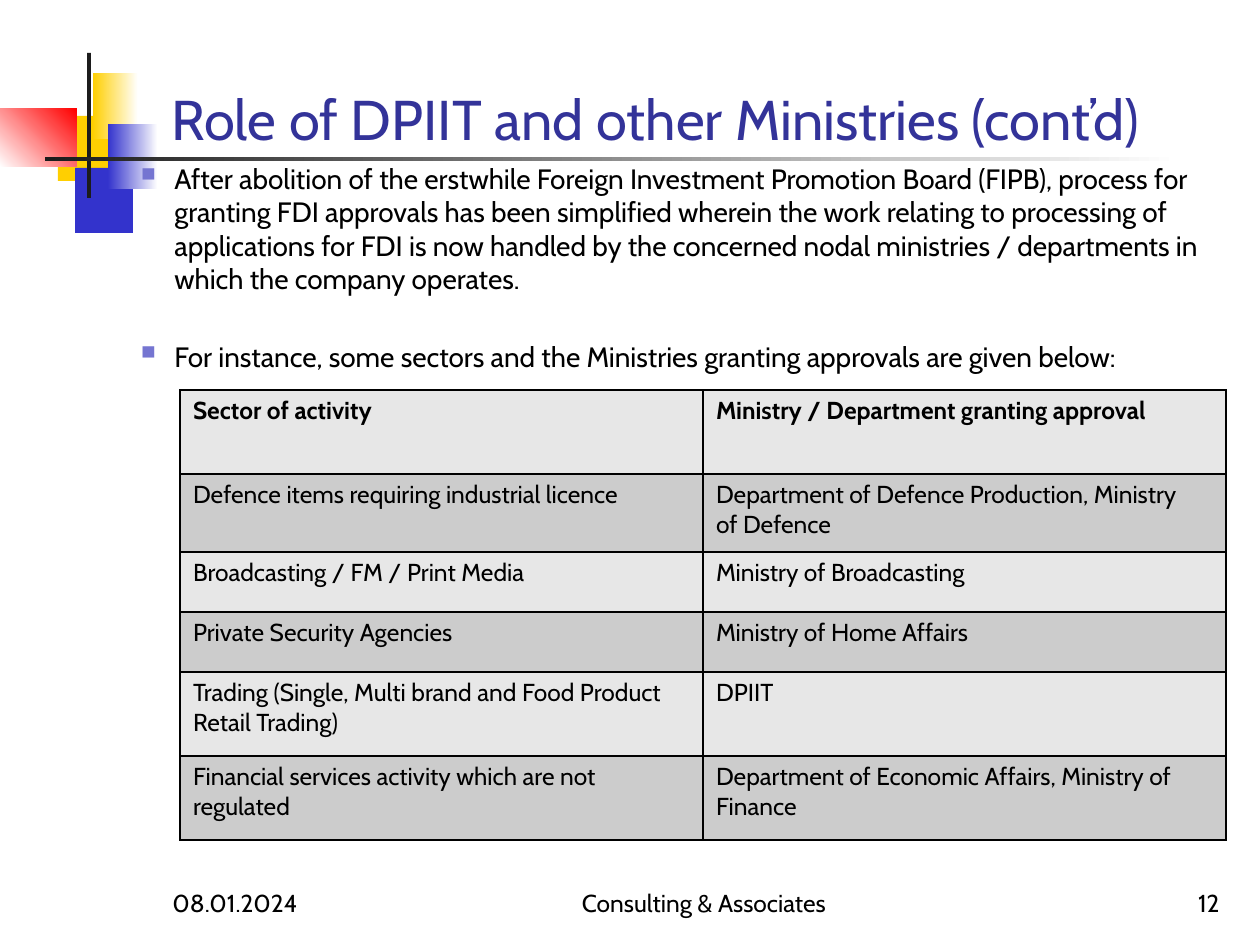
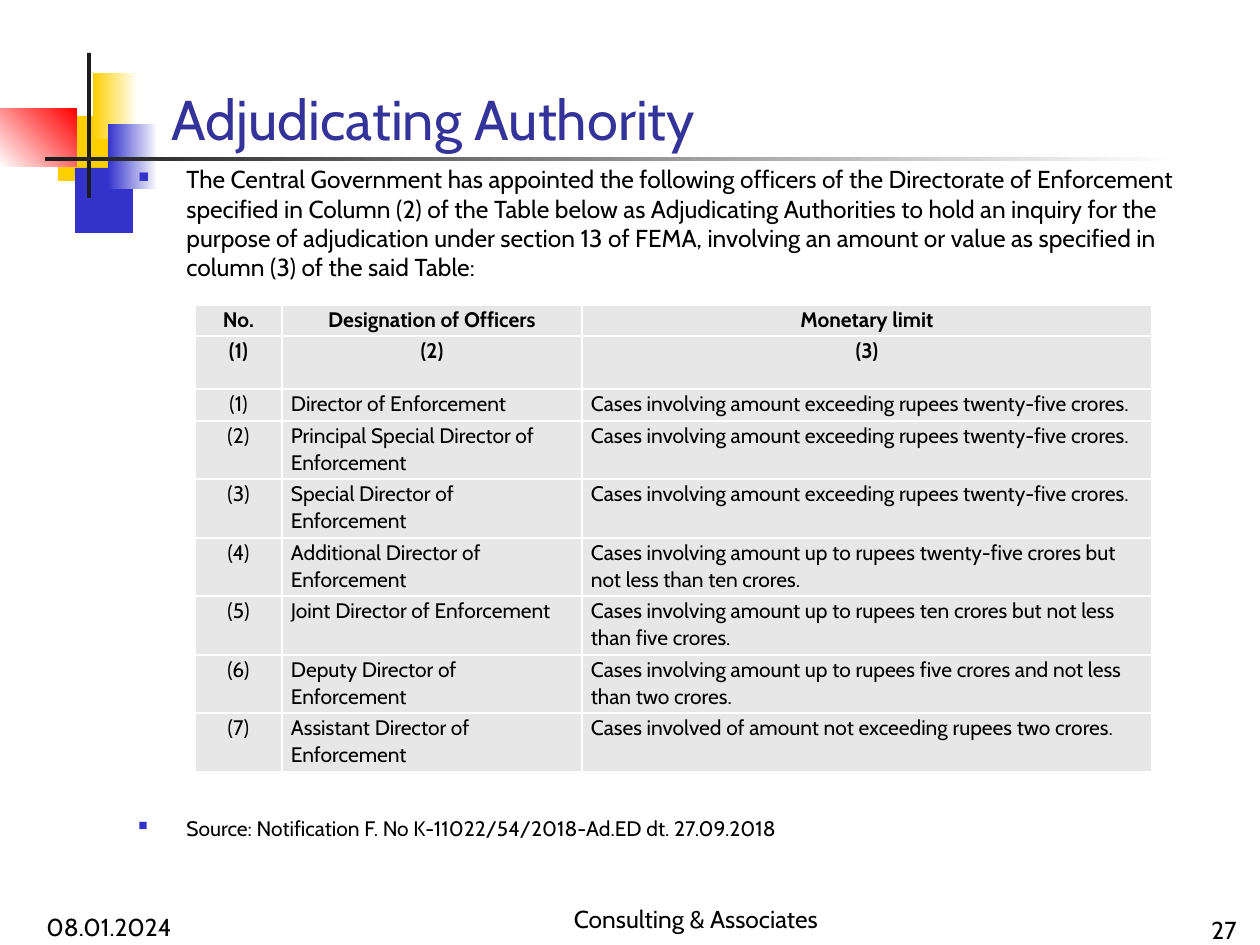
from dataclasses import dataclass

from lxml import etree
from pptx import Presentation
from pptx import util as u
from pptx.dml.color import RGBColor
from pptx.enum import shapes, text as t
from pptx.oxml import ns


@dataclass(frozen=True)
class Theme:
    font: str = "Cabin"
    title: str = "333399"
    ink: str = "000000"
    dark: str = "1C1C1C"
    white: str = "FFFFFF"
    yellow: str = "FFCF01"
    blue: str = "3333CC"
    pale_blue: str = "7575D1"
    red: str = "FF0000"
    light_grey: str = "E7E7E7"
    grey: str = "CCCCCC"
    title_size: int = 32
    lead_size: int = 16
    text_size: int = 14
    small_size: int = 12


theme = Theme()
LEFT, CENTER, RIGHT = t.PP_ALIGN.LEFT, t.PP_ALIGN.CENTER, t.PP_ALIGN.RIGHT
TOP, BOTTOM = t.MSO_ANCHOR.TOP, t.MSO_ANCHOR.BOTTOM


def px(length):
    return u.Emu(round(length * 914400 / 126))


def write(frame, text, size=theme.text_size, color=theme.ink, bold=False,
          align=LEFT, anchor=TOP, before=0, spacing=None, bullet=None):
    frame.word_wrap = True
    frame.vertical_anchor = anchor
    for line in text.split("\n"):
        para = frame.paragraphs[-1]
        if para.runs:
            para = frame.add_paragraph()
        para.alignment = align
        para.space_before = u.Pt(before)
        para.line_spacing = spacing
        span = para.add_run()
        span.text = line
        span.font.name = theme.font
        span.font.size = u.Pt(size)
        span.font.bold = bold
        span.font.color.rgb = RGBColor.from_string(color)
        if bullet:
            mark, mark_color, percent, margin, hanging = bullet
            props = para._p.get_or_add_pPr()
            props.set("marL", str(px(margin)))
            props.set("indent", str(-px(hanging)))
            tint = etree.SubElement(props, ns.qn("a:buClr"))
            etree.SubElement(tint, ns.qn("a:srgbClr"), val=mark_color)
            etree.SubElement(props, ns.qn("a:buSzPct"), val=str(percent * 1000))
            etree.SubElement(props, ns.qn("a:buChar"), char=mark)


decoration = [
    ((58, 116, 60, 65), [theme.yellow], 0),
    ((75, 168, 58, 65), [theme.blue], 0),
    ((93, 73, 45, 66), [theme.yellow, theme.white], 0),
    ((108, 124, 50, 65), [theme.blue, theme.white], 0),
    ((0, 109, 77, 58), [theme.white, theme.red], 45),
    ((87, 53, 4, 145), [theme.dark], 0),
    ((45, 157, 1134, 4), [theme.dark, theme.white], 0),
]

ministry_bullet = ("▪", theme.pale_blue, 125, 102, 39)
authority_bullet = ("■", theme.blue, 60, 48, 48)
exceeding = "Cases involving amount exceeding rupees twenty-five crores."

pages = [
    {
        "title": "Role of DPIIT and other Ministries (cont’d)",
        "number": "12",
        "footer": [(160, 861), (504, 861), (970, 861)],
        "notes": [
            ((60, 155, 1166, 230), [
                ("After abolition of the erstwhile Foreign Investment Promotion Board (FIPB), "
                 "process for granting FDI approvals has been simplified wherein the work "
                 "relating to processing of applications for FDI is now handled by the "
                 "concerned nodal ministries / departments in which the company operates.", 0),
                ("For instance, some sectors and the Ministries granting approvals "
                 "are given below:", 25),
            ], theme.lead_size, ministry_bullet),
        ],
        "place": (180, 390),
        "columns": [523, 523],
        "heights": [84, 78, 60, 60, 84, 84],
        "rows": [
            ("Sector of activity", "Ministry / Department granting approval"),
            ("Defence items requiring industrial licence",
             "Department of Defence Production, Ministry\nof Defence"),
            ("Broadcasting / FM / Print Media", "Ministry of Broadcasting"),
            ("Private Security Agencies", "Ministry of Home Affairs"),
            ("Trading (Single, Multi brand and Food Product Retail Trading)", "DPIIT"),
            ("Financial services activity which are not\nregulated",
             "Department of Economic Affairs, Ministry of\nFinance"),
        ],
        "fills": [theme.light_grey, theme.grey],
        "border": theme.ink,
        "insets": (13, 6),
        "heads": 1,
        "head_align": LEFT,
        "first_align": LEFT,
        "size": theme.text_size,
        "spacing": None,
    },
    {
        "title": "Adjudicating Authority",
        "number": "27",
        "footer": [(34, 885), (496, 877), (987, 888)],
        "notes": [
            ((126, 158, 1106, 135), [
                ("The Central Government has appointed the following officers of the "
                 "Directorate of Enforcement specified in Column (2) of the Table below as "
                 "Adjudicating Authorities to hold an inquiry for the purpose of adjudication "
                 "under section 13 of FEMA, involving an amount or value as specified in "
                 "column (3) of the said Table:", 0),
            ], theme.text_size, authority_bullet),
            ((126, 809, 1106, 40), [
                ("Source: Notification F. No K-11022/54/2018-Ad.ED dt. 27.09.2018", 0),
            ], theme.small_size, authority_bullet),
        ],
        "place": (195, 305),
        "columns": [87, 300, 570],
        "heights": [31, 53, 32] + [58, 59] * 3,
        "rows": [
            ("No.", "Designation of Officers", "Monetary limit"),
            ("(1)", "(2)", "(3)"),
            ("(1)", "Director of Enforcement", exceeding),
            ("(2)", "Principal Special Director of Enforcement", exceeding),
            ("(3)", "Special Director of Enforcement", exceeding),
            ("(4)", "Additional Director of Enforcement",
             "Cases involving amount up to rupees twenty-five crores but not less than ten crores."),
            ("(5)", "Joint Director of Enforcement",
             "Cases involving amount up to rupees ten crores but not less than five crores."),
            ("(6)", "Deputy Director of Enforcement",
             "Cases involving amount up to rupees five crores and not less than two crores."),
            ("(7)", "Assistant Director of Enforcement",
             "Cases involved of amount not exceeding rupees two crores."),
        ],
        "fills": [theme.light_grey],
        "border": theme.white,
        "insets": (9, 0),
        "heads": 2,
        "head_align": CENTER,
        "first_align": CENTER,
        "size": theme.small_size,
        "spacing": 1.07,
    },
]

deck = Presentation()
deck.slide_width, deck.slide_height = px(1260), px(945)

for content in pages:
    page = deck.slides.add_slide(deck.slide_layouts[6])

    for place, colors, angle in decoration:
        block = page.shapes.add_shape(shapes.MSO_SHAPE.RECTANGLE, *map(px, place))
        block.shadow.inherit = False
        block.line.fill.background()
        if len(colors) == 1:
            block.fill.solid()
            block.fill.fore_color.rgb = RGBColor.from_string(colors[0])
        else:
            block.fill.gradient()
            block.fill.gradient_angle = angle
            for stop, color in zip(block.fill.gradient_stops, colors):
                stop.color.rgb = RGBColor.from_string(color)

    box = page.shapes.add_textbox(*map(px, (159, 29, 1074, 129)))
    write(box.text_frame, content["title"], size=theme.title_size,
          color=theme.title, anchor=BOTTOM)

    for place, lines, size, bullet in content["notes"]:
        box = page.shapes.add_textbox(*map(px, place))
        for line, before in lines:
            write(box.text_frame, line, size=size, before=before, bullet=bullet)

    labels = ["08.01.2024", "Consulting & Associates", content["number"]]
    for label, (left, top), width, align in zip(
            labels, content["footer"], [262, 400, 262], [LEFT, CENTER, RIGHT]):
        box = page.shapes.add_textbox(px(left), px(top), px(width), px(63))
        write(box.text_frame, label, align=align, anchor=BOTTOM)

    columns, heights, rows = content["columns"], content["heights"], content["rows"]
    table = page.shapes.add_table(
        len(rows), len(columns), *map(px, content["place"]),
        px(sum(columns)), px(sum(heights))).table
    for column, width in zip(table.columns, columns):
        column.width = px(width)
    for row, height in zip(table.rows, heights):
        row.height = px(height)
    side, edge = map(px, content["insets"])
    for r, row in enumerate(rows):
        for c, text in enumerate(row):
            cell = table.cell(r, c)
            cell.margin_left = cell.margin_right = side
            cell.margin_top = cell.margin_bottom = edge
            head = r < content["heads"]
            align = content["head_align"] if head else content["first_align"] if c == 0 else LEFT
            write(cell.text_frame, text, size=content["size"], bold=head,
                  align=align, spacing=content["spacing"])
            props = cell._tc.get_or_add_tcPr()
            for name in ("a:lnL", "a:lnR", "a:lnT", "a:lnB"):
                line = etree.SubElement(props, ns.qn(name), w=str(u.Pt(1)))
                paint = etree.SubElement(line, ns.qn("a:solidFill"))
                etree.SubElement(paint, ns.qn("a:srgbClr"), val=content["border"])
            cell.fill.solid()
            fills = content["fills"]
            cell.fill.fore_color.rgb = RGBColor.from_string(fills[r % len(fills)])

deck.save("out.pptx")
